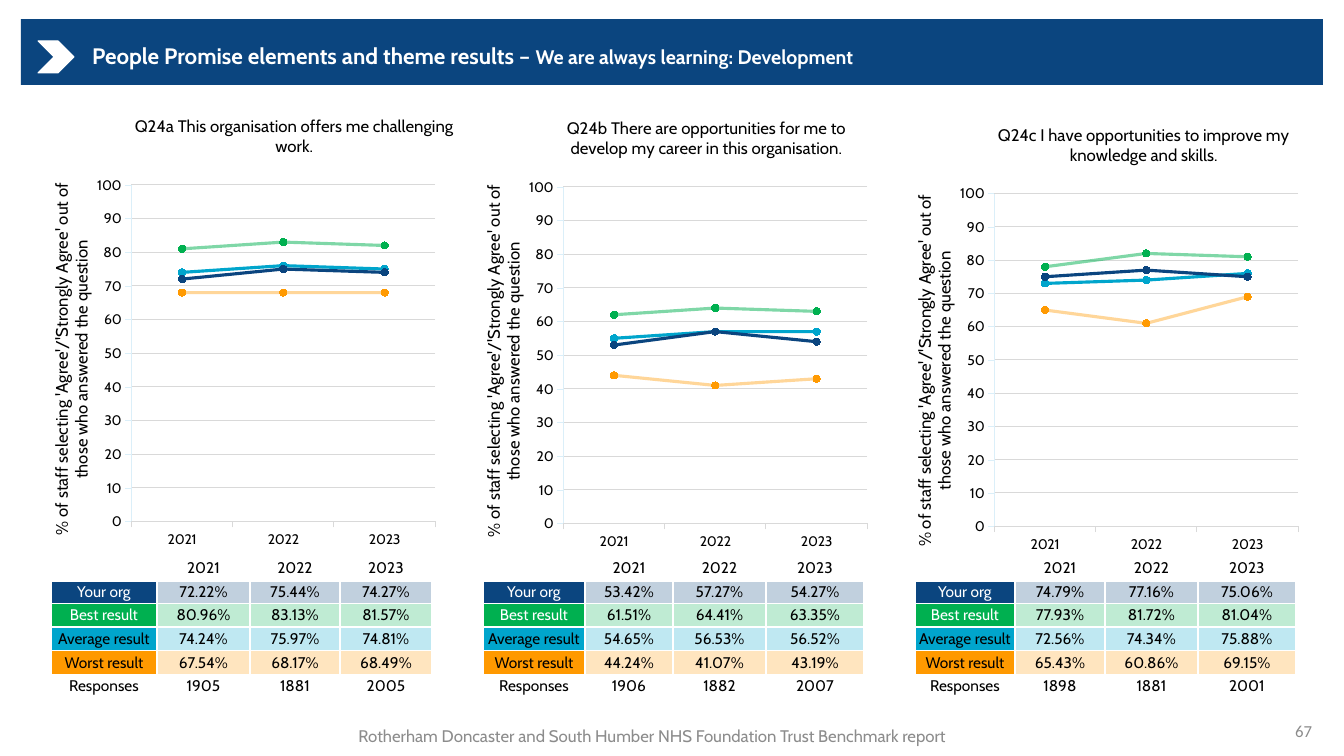
"""Builds the survey results slide on learning and development."""
from pptx import Presentation
from pptx.chart.data import CategoryChartData
from pptx.dml.color import RGBColor
from pptx.enum.chart import XL_CHART_TYPE, XL_MARKER_STYLE, XL_TICK_MARK
from pptx.enum.shapes import MSO_SHAPE
from pptx.enum.text import MSO_ANCHOR, MSO_AUTO_SIZE, PP_ALIGN
from pptx.oxml import parse_xml
from pptx.oxml.ns import nsdecls, qn
from pptx.util import Pt
from lxml.etree import SubElement

PX = 9071
NAVY, GREEN, CYAN, AMBER = "0B457F", "00B050", "00A5CC", "FF9900"
WHITE, BLACK, GREY, RULE = "FFFFFF", "000000", "8C8C8C", "D9D9D9"
YEARS = ["2021", "2022", "2023"]
LABEL = ("% of staff selecting 'Agree'/'Strongly Agree' out of "
         "those who answered the question")
ROWS = [("Your org", NAVY, WHITE), ("Best result", GREEN, WHITE),
        ("Average result", CYAN, BLACK), ("Worst result", AMBER, BLACK)]
LINES = [(2, CYAN, 100), (1, GREEN, 50), (3, "FF9A02", 40), (0, NAVY, 100)]
PANELS = [
    dict(title="Q24a This organisation offers me challenging work.",
         left=47, top=99, tall=0.756, grid=51, cols=[106, 93, 90, 92],
         scores=[[72.22, 75.44, 74.27], [80.96, 83.13, 81.57],
                 [74.24, 75.97, 74.81], [67.54, 68.17, 68.49]],
         counts=[1905, 1881, 2005]),
    dict(title="Q24b There are opportunities for me to develop my career "
               "in this organisation.",
         left=479, top=101, tall=0.756, grid=483, cols=[102, 88, 93, 98],
         scores=[[53.42, 57.27, 54.27], [61.51, 64.41, 63.35],
                 [54.65, 56.53, 56.52], [44.24, 41.07, 43.19]],
         counts=[1906, 1882, 2007]),
    dict(title="Q24c I have opportunities to improve my knowledge and skills.",
         left=910, top=107, tall=0.741, grid=915, cols=[100, 90, 93, 98],
         scores=[[74.79, 77.16, 75.06], [77.93, 81.72, 81.04],
                 [72.56, 74.34, 75.88], [65.43, 60.86, 69.15]],
         counts=[1898, 1881, 2001]),
]
rgb = RGBColor.from_string


def style(font, size, tone, face="Cabin", bold=False):
    font.name, font.size, font.bold = face, Pt(size), bold
    font.color.rgb = rgb(tone)


def place(node, spot, **frame):
    for old in node.findall(qn("c:layout")):
        node.remove(old)
    inner = '<c:layoutTarget val="inner"/>' if "w" in frame else ""
    parts = "".join(f'<c:{key} val="{val}"/>' for key, val in frame.items())
    node.insert(spot, parse_xml(
        f'<c:layout {nsdecls("c")}><c:manualLayout>{inner}'
        f'<c:xMode val="edge"/><c:yMode val="edge"/>{parts}'
        '</c:manualLayout></c:layout>'))


deck = Presentation()
deck.slide_width, deck.slide_height = 1344 * PX, 756 * PX
slide = deck.slides.add_slide(deck.slide_layouts[5])
shapes = slide.shapes
tints = []

for kind, tone, box in [(MSO_SHAPE.RECTANGLE, NAVY, (21, 19, 1302, 66)),
                        (MSO_SHAPE.CHEVRON, WHITE, (38, 41, 36, 32))]:
    shape = shapes.add_shape(kind, *[n * PX for n in box])
    shape.shadow.inherit = False
    shape.fill.solid()
    shape.fill.fore_color.rgb = rgb(tone)
    shape.line.fill.background()
shape.line.color.rgb = rgb(WHITE)
shape.line.width = Pt(0.75)

title = shapes.title
shapes._spTree.append(title._element)
title.left, title.top, title.width, title.height = [
    n * PX for n in (82, 35, 969, 44)]
frame = title.text_frame
frame.auto_size = MSO_AUTO_SIZE.NONE
frame.vertical_anchor = MSO_ANCHOR.MIDDLE
par = frame.paragraphs[0]
par.alignment, par.line_spacing = PP_ALIGN.LEFT, 0.9
style(par.font, 16, WHITE, bold=True)
for text, size in [("People Promise elements and theme results – ", 16),
                   ("We are always learning: Development", 14)]:
    run = par.add_run()
    run.text, run.font.size = text, Pt(size)

for panel in PANELS:
    data = CategoryChartData()
    data.categories = YEARS
    for row, tone, alpha in LINES:
        data.add_series(ROWS[row][0], map(round, panel["scores"][row]))
    chart = shapes.add_chart(
        XL_CHART_TYPE.LINE_MARKERS, panel["left"] * PX, panel["top"] * PX,
        414 * PX, 449 * PX, data).chart
    chart.has_legend = False
    style(chart.font, 10, BLACK)
    across, up = chart.category_axis, chart.value_axis
    up.minimum_scale, up.maximum_scale, up.major_unit = 0, 100, 10
    up.has_major_gridlines = True
    for line, tone, wide in [(across.format.line, RULE, 0.75),
                             (up.format.line, "DBEFF9", 0.25),
                             (up.major_gridlines.format.line, RULE, 0.75)]:
        line.color.rgb = rgb(tone)
        line.width = Pt(wide)
    for axis in (across, up):
        axis.major_tick_mark = XL_TICK_MARK.OUTSIDE
        style(axis.tick_labels.font, 10, BLACK)
    for head, text, x, y in [(chart.chart_title, panel["title"], 0.205, 0.03),
                             (up.axis_title, LABEL, 0, 0.188)]:
        head.text_frame.text = text
        style(head.text_frame.paragraphs[0].font, 12, BLACK)
        place(head._element, 1, x=x, y=y)
    place(chart._chartSpace.chart.plotArea, 0,
          x=0.204, y=0.193, w=0.734, h=panel["tall"])
    for plot, (row, tone, alpha) in zip(chart.plots[0].series, LINES):
        plot.smooth = False
        plot.format.line.color.rgb = rgb(tone)
        plot.format.line.width = Pt(2.25)
        tints.append((plot._element.find(qn("c:spPr")), alpha))
        mark = plot.marker
        mark.style, mark.size = XL_MARKER_STYLE.CIRCLE, 5
        mark.format.fill.solid()
        mark.format.fill.fore_color.rgb = rgb(tone)
        mark.format.line.color.rgb = rgb(tone)

    cells = [["", *YEARS]]
    for (name, tone, ink), scores in zip(ROWS, panel["scores"]):
        cells.append([name, *[f"{score:.2f}%" for score in scores]])
    cells.append(["Responses", *map(str, panel["counts"])])
    table = shapes.add_table(6, 4, panel["grid"] * PX, 556 * PX,
                             sum(panel["cols"]) * PX, 142 * PX).table
    table.first_row = table.horz_banding = False
    for col, wide in zip(table.columns, panel["cols"]):
        col.width = wide * PX
    for r, texts in enumerate(cells):
        table.rows[r].height = 142 * PX // 6
        for c, text in enumerate(texts):
            cell = table.cell(r, c)
            cell.margin_left = cell.margin_right = 0
            cell.margin_top = cell.margin_bottom = 0
            cell.vertical_anchor = MSO_ANCHOR.MIDDLE
            cell.text = text
            par = cell.text_frame.paragraphs[0]
            par.alignment = PP_ALIGN.CENTER
            ink = BLACK
            props = cell._tc.get_or_add_tcPr()
            if 1 <= r <= 4:
                name, tone, lead = ROWS[r - 1]
                ink = BLACK if c else lead
                cell.fill.solid()
                cell.fill.fore_color.rgb = rgb(tone)
                tints.append((props.find(qn("a:solidFill")), 25 if c else 100))
            else:
                cell.fill.background()
            style(par.font, 11, ink)
            for spot, side in enumerate("LRTB"):
                thick = 3 if (r, side) in [(0, "B"), (1, "T")] else 1
                props.insert(spot, parse_xml(
                    f'<a:ln{side} {nsdecls("a")} w="{Pt(thick)}"><a:solidFill>'
                    f'<a:srgbClr val="{WHITE}"/></a:solidFill></a:ln{side}>'))

for node, alpha in tints:
    if alpha < 100:
        for tone in node.iter(qn("a:srgbClr")):
            SubElement(tone, qn("a:alpha")).set("val", str(alpha * 1000))

for text, box, align, face in [
        ("67", (1020, 711, 302, 40), PP_ALIGN.RIGHT, "Calibri"),
        ("Rotherham Doncaster and South Humber NHS Foundation Trust "
         "Benchmark report", (297, 716, 711, 39), PP_ALIGN.CENTER, "Cabin")]:
    frame = shapes.add_textbox(*[n * PX for n in box]).text_frame
    frame.word_wrap = True
    frame.vertical_anchor = MSO_ANCHOR.MIDDLE
    par = frame.paragraphs[0]
    par.text, par.alignment = text, align
    style(par.font, 12, GREY, face)

deck.save("out.pptx")
